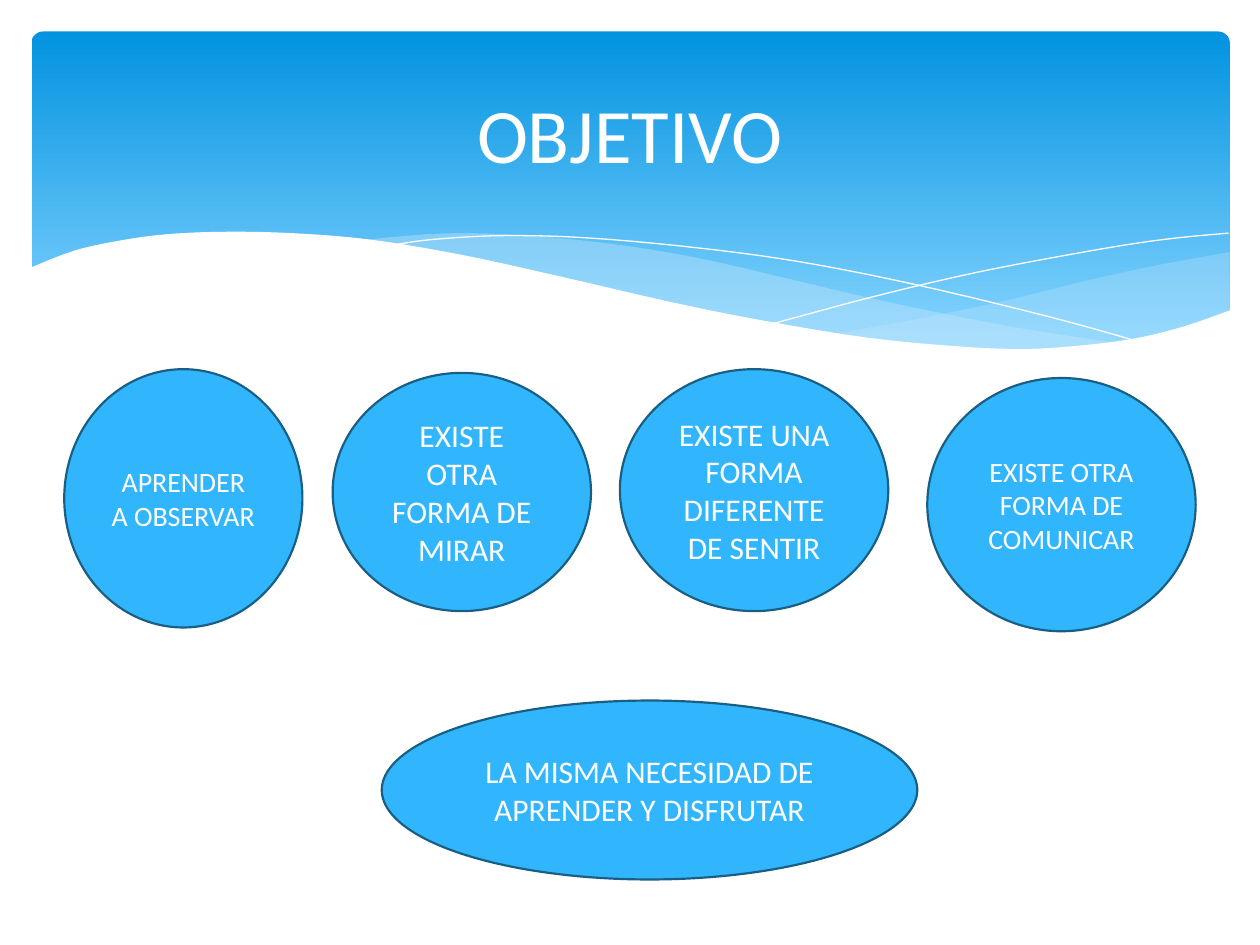
from dataclasses import dataclass

from lxml.etree import SubElement
from pptx import Presentation
from pptx.dml.color import RGBColor
from pptx.enum.shapes import MSO_SHAPE
from pptx.enum.text import MSO_ANCHOR, PP_ALIGN
from pptx.oxml.ns import qn
from pptx.util import Inches, Pt


@dataclass(frozen=True)
class Theme:
    """Colours and type sizes of the slide."""

    font: str = "Calibri"
    white: str = "FFFFFF"
    banner_top: str = "0293E0"
    banner_bottom: str = "83D3FE"
    wave: str = "C6E7FC"
    bubble: str = "31B6FD"
    bubble_line: str = "195F84"
    title_size: int = 44
    large_size: int = 18
    small_size: int = 16


THEME = Theme()

RIGHT_WAVE_TOP = [(9.76, 2), (9.21, 2.1), (8.61, 2.23), (8.05, 2.37), (7.29, 2.53), (6.61, 2.65)]
RIGHT_WAVE_BOTTOM = [(6.61, 2.65), (7.05, 2.71), (7.57, 2.76), (8.14, 2.78), (8.63, 2.75),
                     (9.05, 2.69), (9.42, 2.59), (9.76, 2.47)]
LONG_WAVE_TOP = [(8.93, 2.73), (8.07, 2.6), (7.06, 2.4), (6.29, 2.22), (5.55, 2.05), (4.89, 1.94),
                 (4.2, 1.87), (3.61, 1.85), (3.13, 1.88), (2.86, 1.91)]
LONG_WAVE_BOTTOM = [(2.86, 1.91), (3.62, 2.03), (4.49, 2.22), (5.3, 2.4), (6.01, 2.55), (6.8, 2.68),
                    (7.48, 2.76), (8.07, 2.78), (8.57, 2.77), (8.93, 2.73)]
FALLING_LINE = [(3.09, 1.95), (3.44, 1.9), (4.01, 1.87), (4.69, 1.89), (5.56, 1.97), (6.36, 2.08),
                (7.27, 2.26), (8.31, 2.51), (9.07, 2.72)]
RISING_LINE = [(6.13, 2.57), (6.95, 2.35), (7.76, 2.16), (8.66, 1.99), (9.24, 1.9), (9.75, 1.85)]
WHITE_WAVE = [(9.77, 2.46), (9.4, 2.59), (8.99, 2.69), (8.5, 2.75), (8.09, 2.77), (7.61, 2.75),
              (6.88, 2.68), (6.03, 2.54), (5.29, 2.39), (4.47, 2.2), (3.65, 2.02), (2.92, 1.9),
              (2.3, 1.85), (1.77, 1.84), (1.32, 1.86), (0.95, 1.91), (0.59, 1.99), (0.23, 2.13)]
WHITE_BASE = [(0.23, 3.29), (9.77, 3.29)]

BUBBLES = [
    ("EXISTE UNA FORMA DIFERENTE DE SENTIR", (4.92, 2.93, 2.13, 1.92), THEME.large_size),
    ("APRENDER A OBSERVAR", (0.51, 2.93, 1.89, 2.05), THEME.small_size),
    ("EXISTE OTRA FORMA DE MIRAR", (2.64, 2.96, 2.05, 1.89), THEME.large_size),
    ("EXISTE OTRA FORMA DE COMUNICAR", (7.36, 3, 2.13, 2.01), THEME.small_size),
    ("LA MISMA NECESIDAD DE APRENDER Y DISFRUTAR", (3.03, 5.56, 4.25, 1.42), THEME.large_size),
]


def smooth(points, steps=5):
    """Return a Catmull-Rom curve through the points."""
    padded = [points[0], *points, points[-1]]
    curve = [points[0]]
    for a, b, c, d in zip(padded, padded[1:], padded[2:], padded[3:]):
        for step in range(1, steps + 1):
            t = step / steps
            curve.append(tuple(
                (2 * q + (r - p) * t + (2 * p - 5 * q + 4 * r - s) * t ** 2
                 + (3 * q - p - 3 * r + s) * t ** 3) / 2
                for p, q, r, s in zip(a, b, c, d)))
    return curve


def write_text(shape, text, *, size, color=THEME.white):
    """Write centred text into a shape."""
    frame = shape.text_frame
    frame.word_wrap = True
    frame.vertical_anchor = MSO_ANCHOR.MIDDLE
    paragraph = frame.paragraphs[0]
    paragraph.alignment = PP_ALIGN.CENTER
    run = paragraph.add_run()
    run.text = text
    run.font.name = THEME.font
    run.font.size = Pt(size)
    run.font.color.rgb = RGBColor.from_string(color)


def paint(shape, fill=None, line=None, width=0, opacity=100):
    """Set fill, opacity and line of a shape and drop its shadow."""
    shape.shadow.inherit = False
    if fill:
        shape.fill.solid()
        shape.fill.fore_color.rgb = RGBColor.from_string(fill)
        if opacity < 100:
            color = shape.fill._xPr.find(qn("a:solidFill"))[0]
            SubElement(color, qn("a:alpha")).set("val", str(opacity * 1000))
    else:
        shape.fill.background()
    if line:
        shape.line.color.rgb = RGBColor.from_string(line)
        shape.line.width = Pt(width)
    else:
        shape.line.fill.background()


def add_outline(slide, points, closed=True, **style):
    """Add a freeform through the points."""
    start, *rest = [(Inches(x), Inches(y)) for x, y in points]
    builder = slide.shapes.build_freeform(*start)
    builder.add_line_segments(rest, close=closed)
    paint(builder.convert_to_shape(), **style)


def add_banner(slide):
    """Add the gradient banner with its waves."""
    banner = slide.shapes.add_shape(
        MSO_SHAPE.ROUNDED_RECTANGLE, Inches(0.25), Inches(0.25), Inches(9.51), Inches(2.7))
    banner.adjustments[0] = 0.034
    paint(banner)
    banner.fill.gradient()
    banner.fill.gradient_angle = 270
    stops = banner.fill.gradient_stops
    for stop, color, position in zip(stops, (THEME.banner_top, THEME.banner_bottom), (0, 0.9)):
        stop.color.rgb = RGBColor.from_string(color)
        stop.position = position
    for top, bottom, opacity in ((RIGHT_WAVE_TOP, RIGHT_WAVE_BOTTOM, 29),
                                 (LONG_WAVE_TOP, LONG_WAVE_BOTTOM, 40)):
        add_outline(slide, smooth(top) + smooth(bottom), fill=THEME.wave, opacity=opacity)
    for points in (FALLING_LINE, RISING_LINE):
        add_outline(slide, smooth(points), closed=False, line=THEME.white)
    add_outline(slide, smooth(WHITE_WAVE) + WHITE_BASE, fill=THEME.white)


def add_title(slide, text):
    """Add the slide title."""
    title = slide.shapes.add_textbox(Inches(0.5), Inches(0.37), Inches(9), Inches(1.37))
    write_text(title, text, size=THEME.title_size)


def add_bubble(slide, text, box, size):
    """Add an ellipse with text."""
    bubble = slide.shapes.add_shape(MSO_SHAPE.OVAL, *map(Inches, box))
    paint(bubble, fill=THEME.bubble, line=THEME.bubble_line, width=1.25)
    write_text(bubble, text, size=size)


def main():
    """Build and save the slide."""
    presentation = Presentation()
    presentation.slide_width = Inches(10)
    presentation.slide_height = Inches(7.5)
    slide = presentation.slides.add_slide(presentation.slide_layouts[6])
    add_banner(slide)
    add_title(slide, "OBJETIVO")
    for text, box, size in BUBBLES:
        add_bubble(slide, text, box, size)
    presentation.save("out.pptx")


if __name__ == "__main__":
    main()
